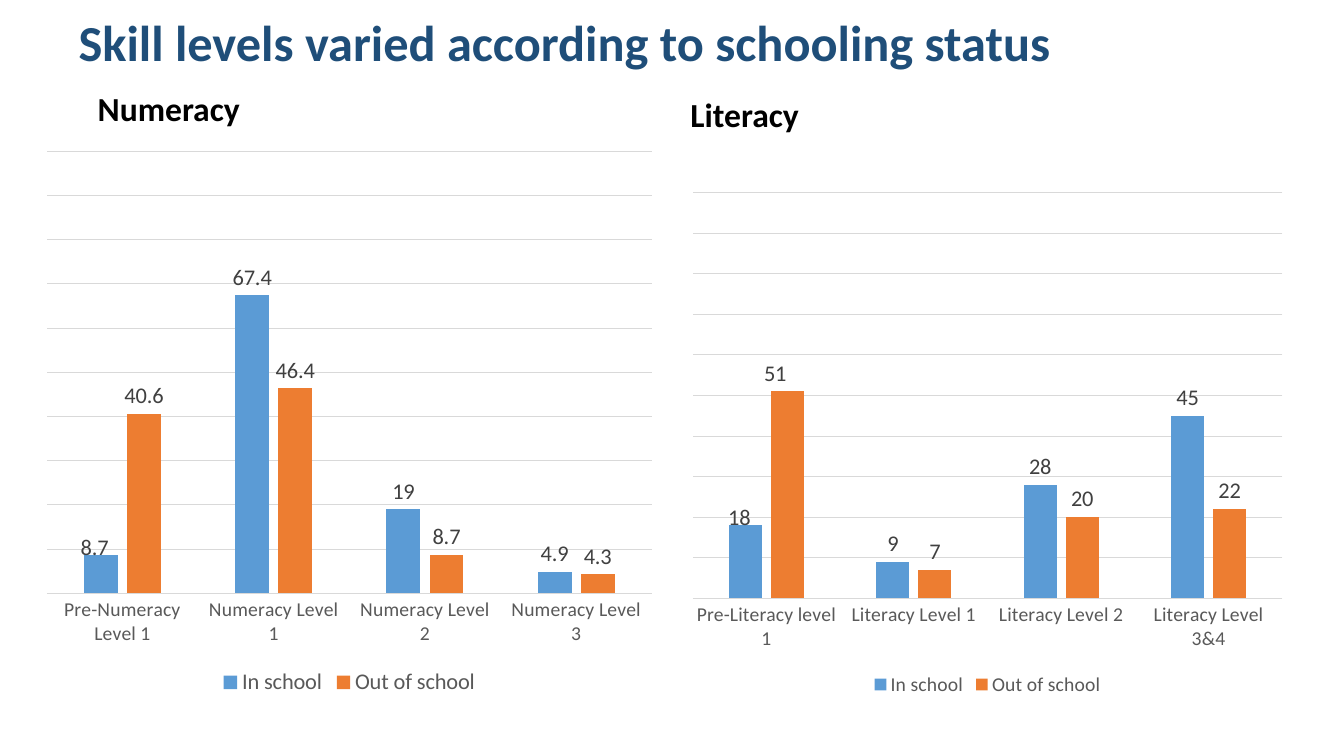
import pptx
import pptx.util
import pptx.chart.data
import pptx.dml.color
import pptx.enum.chart
import pptx.enum.text
from pptx.oxml import parse_xml
from pptx.oxml.ns import nsdecls

Inches, Pt = pptx.util.Inches, pptx.util.Pt

# Content
COLORS = {"title": "1F4E79", "heading": "000000", "axis": "595959", "label": "404040",
          "grid": "D9D9D9", "In school": "5B9BD5", "Out of school": "ED7D31"}
FONT = "Calibri"
TITLE = "Skill levels varied according to schooling status"
TITLE_BOX = (0.68, 0.17, 11.06, 0.56)

# "nudges" moves the first label of a series by a fraction of the chart's size
SKILLS = [
    {"heading": "Literacy", "heading_box": (6.75, 0.69, 4.42, 0.7),
     "chart_box": (6.75, 1.81, 6.09, 5.14), "legend_size": 14, "number_format": "0",
     "levels": ["Pre-Literacy level 1", "Literacy Level 1", "Literacy Level 2",
                "Literacy Level 3&4"],
     "shares": {"In school": (18, 9, 28, 45), "Out of school": (51, 7, 20, 22)},
     "nudges": {"In school": (-0.01, 0.02), "Out of school": (-0.02, 0)}},
    {"heading": "Numeracy", "heading_box": (0.87, 0.63, 4.42, 0.7),
     "chart_box": (0.34, 1.39, 6.25, 5.56), "legend_size": 16, "number_format": "General",
     "levels": ["Pre-Numeracy Level 1", "Numeracy Level 1", "Numeracy Level 2",
                "Numeracy Level 3"],
     "shares": {"In school": (8.7, 67.4, 19, 4.9), "Out of school": (40.6, 46.4, 8.7, 4.3)},
     "nudges": {"In school": (-0.01, 0.02)}},
]


def rgb(name):
    return pptx.dml.color.RGBColor.from_string(COLORS[name])


def style_font(font, size, color, bold=False):
    font.name, font.size, font.bold = FONT, Pt(size), bold
    font.color.rgb = rgb(color)


def write_text(shape, text, size, color, anchor, space_before=0):
    frame = shape.text_frame
    frame.word_wrap = True
    frame.auto_size = pptx.enum.text.MSO_AUTO_SIZE.NONE
    frame.vertical_anchor = anchor
    paragraph = frame.paragraphs[0]
    paragraph.alignment = pptx.enum.text.PP_ALIGN.LEFT
    paragraph.line_spacing = 0.9
    paragraph.space_before = Pt(space_before)
    run = paragraph.add_run()
    run.text = text
    style_font(run.font, size, color, bold=True)


def nudge_first_label(series, x, y):
    label = series.points[0].data_label
    style_font(label.font, 16, "label")
    label.position = pptx.enum.chart.XL_LABEL_POSITION.OUTSIDE_END
    layout = parse_xml(f'<c:layout {nsdecls("c")}><c:manualLayout>'
                       f'<c:x val="{x}"/><c:y val="{y}"/></c:manualLayout></c:layout>')
    series.data_labels._element.find(pptx.oxml.ns.qn("c:dLbl")).insert(1, layout)


def add_skill_chart(slide, skill):
    data = pptx.chart.data.CategoryChartData(number_format=skill["number_format"])
    data.categories = skill["levels"]
    for status, shares in skill["shares"].items():
        data.add_series(status, shares)
    chart = slide.shapes.add_chart(
        pptx.enum.chart.XL_CHART_TYPE.COLUMN_CLUSTERED,
        *map(Inches, skill["chart_box"]), data).chart
    style_font(chart.font, 12, "heading")
    chart.has_title = False

    # Legend
    chart.has_legend = True
    chart.legend.position = pptx.enum.chart.XL_LEGEND_POSITION.BOTTOM
    chart.legend.include_in_layout = False
    style_font(chart.legend.font, skill["legend_size"], "axis")

    # Axes
    levels_axis, share_axis = chart.category_axis, chart.value_axis
    levels_axis.major_tick_mark = pptx.enum.chart.XL_TICK_MARK.NONE
    style_font(levels_axis.tick_labels.font, 14, "axis")
    share_axis.visible = False
    share_axis.minimum_scale, share_axis.maximum_scale = 0, 100
    share_axis.major_unit = 10
    share_axis.has_major_gridlines = True
    for line in (levels_axis.format.line, share_axis.major_gridlines.format.line):
        line.color.rgb = rgb("grid")
        line.width = Pt(0.75)

    # Columns and their labels
    plot = chart.plots[0]
    plot.gap_width, plot.overlap, plot.vary_by_categories = 219, -27, False
    for series in plot.series:
        series.format.fill.solid()
        series.format.fill.fore_color.rgb = rgb(series.name)
        labels = series.data_labels
        labels.show_value = True
        labels.number_format = skill["number_format"]
        labels.number_format_is_linked = False
        labels.position = pptx.enum.chart.XL_LABEL_POSITION.OUTSIDE_END
        style_font(labels.font, 16, "label")
        if series.name in skill["nudges"]:
            nudge_first_label(series, *skill["nudges"][series.name])


def main():
    deck = pptx.Presentation()
    deck.slide_width, deck.slide_height = Inches(13.33), Inches(7.5)
    slide = deck.slides.add_slide(deck.slide_layouts[5])

    # Title
    title = slide.shapes.title
    title.left, title.top, title.width, title.height = map(Inches, TITLE_BOX)
    write_text(title, TITLE, 36, "title", pptx.enum.text.MSO_ANCHOR.MIDDLE)

    # One heading and chart for each skill
    for skill in SKILLS:
        heading = slide.shapes.add_textbox(*map(Inches, skill["heading_box"]))
        write_text(heading, skill["heading"], 24, "heading",
                   pptx.enum.text.MSO_ANCHOR.BOTTOM, space_before=10)
        add_skill_chart(slide, skill)

    deck.save("out.pptx")


if __name__ == "__main__":
    main()
